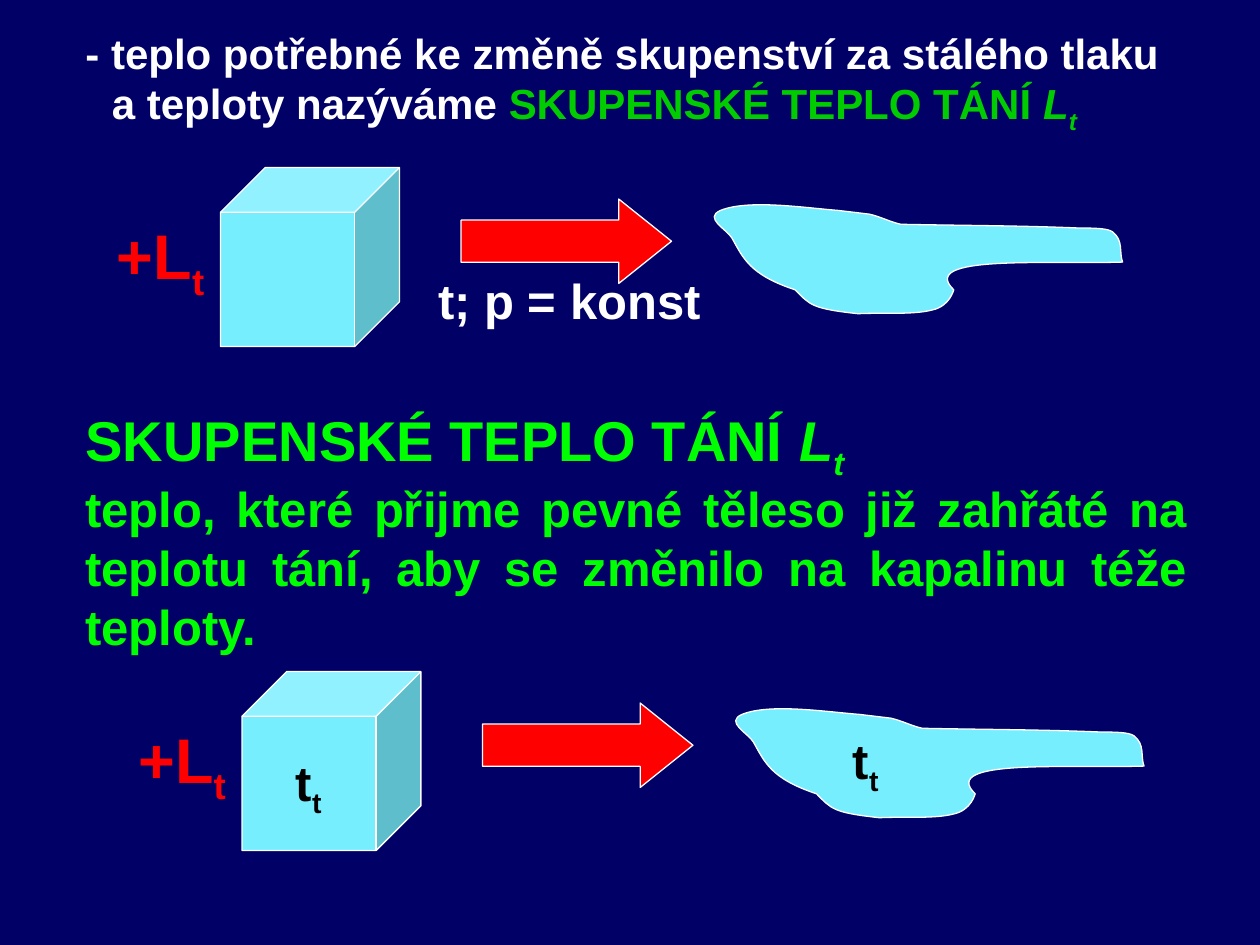
from dataclasses import dataclass

from pptx import Presentation
from pptx.dml.color import RGBColor
from pptx.enum.shapes import MSO_SHAPE as SHAPE
from pptx.enum.text import MSO_ANCHOR as ANCHOR, MSO_AUTO_SIZE as AUTO, PP_ALIGN as ALIGN
from pptx.oxml.ns import qn
from pptx.util import Inches, Pt


@dataclass(frozen=True)
class Theme:
    font: str = "Arial"
    background: str = "000066"
    white: str = "FFFFFF"
    black: str = "000000"
    red: str = "FF0000"
    ice: str = "76EEFE"
    term: str = "00CC00"
    definition: str = "00FF00"
    intro_size: int = 24
    body_size: int = 28
    heading_size: int = 32
    heat_size: int = 36
    outline: float = 0.75


THEME = Theme()
SUB = {"sub": True}
ITALIC = {"italic": True}

PUDDLE_START = (1.07, 0.09)
PUDDLE_CURVES = [
    ((0.81, 0.07), (0.36, 0), (0.14, 0.09)),
    ((0, 0.15), (0.19, 0.24), (0.23, 0.31)),
    ((0.32, 0.47), (0.37, 0.6), (0.73, 0.72)),
    ((0.85, 0.84), (0.86, 0.87), (1.23, 0.91)),
    ((1.43, 0.9), (1.67, 0.92), (1.82, 0.88)),
    ((1.96, 0.85), (1.99, 0.72), (1.99, 0.72)),
    ((1.7, 0.44), (2.73, 0.52), (3.33, 0.5)),
    ((3.3, 0.42), (3.34, 0.33), (3.25, 0.26)),
    ((3.21, 0.23), (3.09, 0.23), (2.99, 0.23)),
    ((2.52, 0.21), (2.04, 0.21), (1.57, 0.2)),
    ((1.48, 0.18), (1.41, 0.14), (1.32, 0.12)),
    ((1.24, 0.11), (1.07, 0.09), (1.07, 0.09)),
]


def rgb(color):
    return RGBColor.from_string(color)


def place(sp, x, y, w, h):
    sp.left, sp.top, sp.width, sp.height = map(Inches, (x, y, w, h))


def add_text(slide, box, runs, size, color, sp=None, align=ALIGN.LEFT, wrap=True, hang=0):
    sp = sp or slide.shapes.add_textbox(0, 0, 0, 0)
    place(sp, *box)
    tf = sp.text_frame
    tf.word_wrap = wrap
    tf.auto_size = AUTO.NONE
    tf.vertical_anchor = ANCHOR.TOP
    p = tf.paragraphs[0]
    p.alignment = align
    if hang:
        pPr = p._p.get_or_add_pPr()
        pPr.set("marL", str(Inches(hang)))
        pPr.set("indent", str(-Inches(hang)))
    for text, style in runs:
        r = p.add_run()
        r.text = text
        r.font.name = THEME.font
        r.font.size = Pt(size)
        r.font.bold = True
        r.font.italic = style.get("italic", False)
        r.font.color.rgb = rgb(style.get("color", color))
        if style.get("sub"):
            r._r.get_or_add_rPr().set("baseline", "-25000")


def paint(sp, color):
    sp.shadow.inherit = False
    sp.fill.solid()
    sp.fill.fore_color.rgb = rgb(color)
    sp.line.color.rgb = rgb(THEME.white)
    sp.line.width = Pt(THEME.outline)


def add_preset(slide, kind, box, color, adjustments):
    sp = slide.shapes.add_shape(kind, *map(Inches, box))
    for i, value in enumerate(adjustments):
        sp.adjustments[i] = value
    paint(sp, color)


def curve_segments(sp):
    segments = list(sp._element.iter(qn("a:lnTo")))
    for first, second, third in zip(segments[::3], segments[1::3], segments[2::3]):
        first.tag = qn("a:cubicBezTo")
        for segment in (second, third):
            first.append(segment[0])
            segment.getparent().remove(segment)


def add_puddle(slide, x, y):
    start, *points = [
        (Inches(x + px), Inches(y + py))
        for px, py in [PUDDLE_START, *sum(PUDDLE_CURVES, ())]
    ]
    builder = slide.shapes.build_freeform(*start)
    builder.add_line_segments(points, close=True)
    sp = builder.convert_to_shape()
    curve_segments(sp)
    paint(sp, THEME.ice)


def add_melting(slide, x, y):
    add_text(slide, (x, y + 0.34, 1.42, 0.7), [("+L", {}), ("t", SUB)],
             THEME.heat_size, THEME.red)
    add_preset(slide, SHAPE.CUBE, (x + 0.92, y, 1.42, 1.42), THEME.ice, [0.25])
    add_preset(slide, SHAPE.RIGHT_ARROW, (x + 2.83, y + 0.25, 1.67, 0.67),
               THEME.red, [0.5, 0.625])
    add_puddle(slide, x + 4.75, y + 0.25)


def main():
    prs = Presentation()
    prs.slide_width, prs.slide_height = Inches(10), Inches(7.5)
    slide = prs.slides.add_slide(prs.slide_layouts[5])
    slide.background.fill.solid()
    slide.background.fill.fore_color.rgb = rgb(THEME.background)

    term = {"color": THEME.term}
    add_text(slide, (0.58, 0.17, 8.92, 0.9), [
        ("- teplo potřebné ke změně skupenství za stálého tlaku a teploty nazýváme ", {}),
        ("SKUPENSKÉ TEPLO TÁNÍ ", term),
        ("L", term | ITALIC),
        ("t", term | ITALIC | SUB),
    ], THEME.intro_size, THEME.white, hang=0.21)

    add_melting(slide, 0.83, 1.33)
    add_text(slide, (3.38, 2.1, 2.29, 0.57), [("t; p = konst", {})],
             THEME.body_size, THEME.white, wrap=False)

    add_text(slide, (0.58, 3.17, 6.23, 0.63), [
        ("SKUPENSKÉ TEPLO TÁNÍ ", {}), ("L", ITALIC), ("t", ITALIC | SUB),
    ], THEME.heading_size, THEME.definition, sp=slide.shapes.title, wrap=False)
    add_text(slide, (0.58, 3.75, 8.94, 1.5), [
        ("teplo, které přijme pevné těleso již zahřáté na teplotu tání, "
         "aby se změnilo na kapalinu téže teploty.", {}),
    ], THEME.body_size, THEME.definition, align=ALIGN.JUSTIFY)

    add_melting(slide, 1, 5.33)
    for x, y in ((2.25, 5.92), (6.67, 5.75)):
        add_text(slide, (x, y, 1, 0.57), [("t", {}), ("t", SUB)],
                 THEME.body_size, THEME.black)

    prs.save("out.pptx")


if __name__ == "__main__":
    main()
